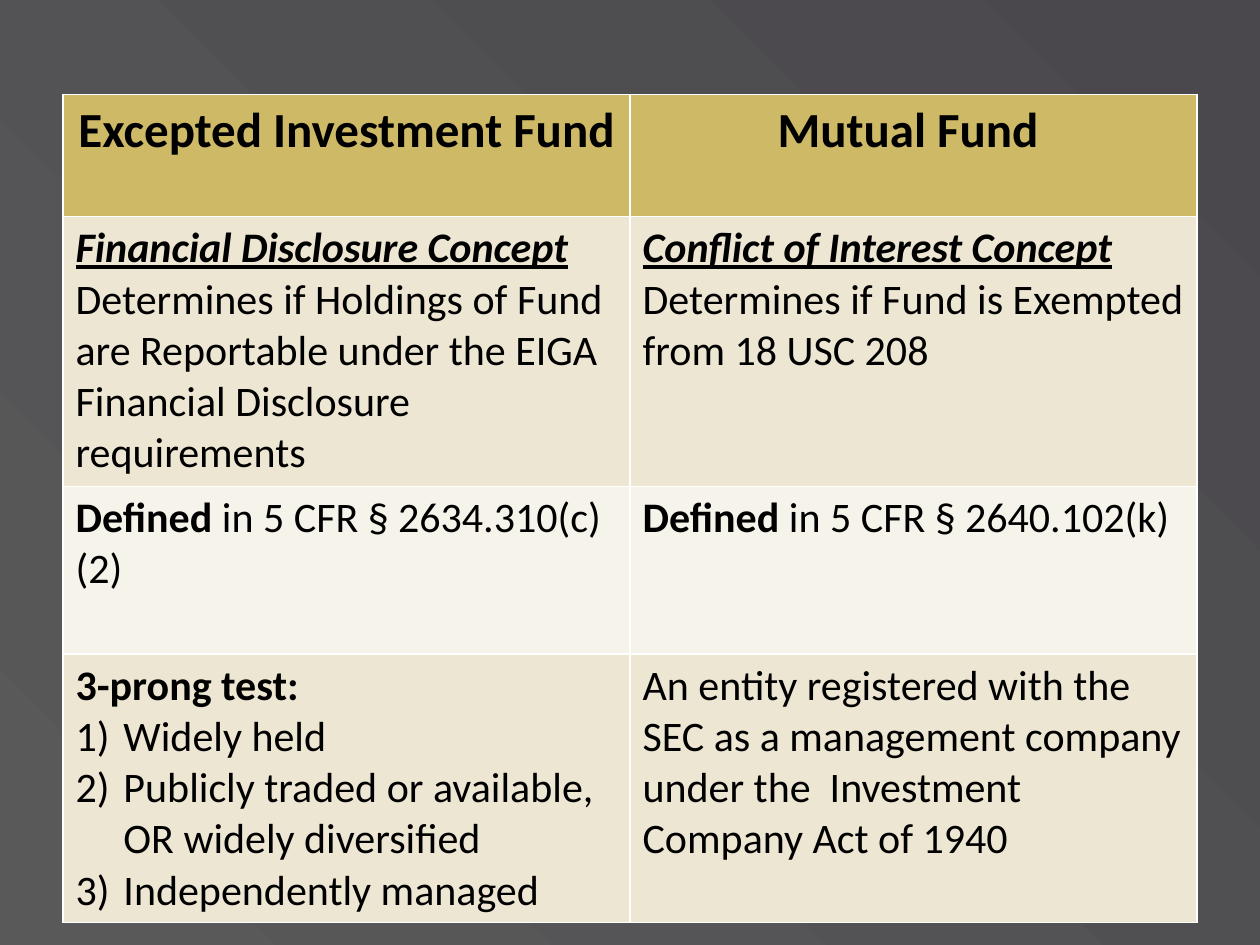
from lxml import etree
from pptx import Presentation
from pptx.dml.color import RGBColor
from pptx.enum.text import PP_ALIGN
from pptx.oxml import parse_xml
from pptx.oxml.ns import nsdecls, qn
from pptx.util import Inches, Pt

GOLD = RGBColor(0xCE, 0xB9, 0x66)
SAND = RGBColor(0xED, 0xE6, 0xD3)
CREAM = RGBColor(0xF6, 0xF3, 0xEA)
BLACK = RGBColor(0, 0, 0)
GREY = RGBColor(0x59, 0x59, 0x59)
SLATE = RGBColor(0x4A, 0x48, 0x4D)

PLAIN, BOLD, CONCEPT, NUMBERED = "plain", "bold", "concept", "numbered"

fund_rows = [
    (0.97, GOLD, 28, [
        [[("Excepted Investment Fund", BOLD)]],
        [[("Mutual Fund ", BOLD)]],
    ]),
    (2.14, SAND, 24, [
        [[("Financial Disclosure Concept", CONCEPT)],
         [("Determines if Holdings of Fund are Reportable under the EIGA "
           "Financial Disclosure requirements", PLAIN)]],
        [[("Conflict of Interest Concept", CONCEPT)],
         [("Determines if Fund is Exempted from 18 USC 208", PLAIN)]],
    ]),
    (1.33, CREAM, 24, [
        [[("Defined", BOLD), (" in 5 CFR § 2634.310(c)(2)", PLAIN)]],
        [[("Defined", BOLD), (" in 5 CFR § 2640.102(k)", PLAIN)]],
    ]),
    (2.13, SAND, 24, [
        [[("3-prong test:", BOLD)],
         [("Widely held", NUMBERED)],
         [("Publicly traded or available, OR widely diversified", NUMBERED)],
         [("Independently managed", NUMBERED)]],
        [[("An entity registered with the SEC as a management company under "
           "the  Investment Company Act of 1940", PLAIN)]],
    ]),
]

prs = Presentation()
prs.slide_width, prs.slide_height = Inches(10), Inches(7.5)
slide = prs.slides.add_slide(prs.slide_layouts[6])

backdrop = slide.background.fill
backdrop.gradient()
for stop, position, color in zip(backdrop.gradient_stops, (0, 1), (GREY, SLATE)):
    stop.position = position
    stop.color.rgb = color
direction = slide.background._cSld.find(".//" + qn("a:lin"))
direction.getparent().replace(direction, parse_xml(
    f'<a:path {nsdecls("a")} path="circle">'
    '<a:fillToRect t="100000" r="100000"/></a:path>'))

margin = prs.slide_width // 20
comparison = slide.shapes.add_table(
    len(fund_rows), 2, margin, prs.slide_height // 10,
    prs.slide_width - 2 * margin, Inches(sum(row[0] for row in fund_rows))).table

for row_index, (height, row_fill, size, fund_texts) in enumerate(fund_rows):
    comparison.rows[row_index].height = Inches(height)
    for column_index, lines in enumerate(fund_texts):
        cell = comparison.cell(row_index, column_index)
        cell.fill.solid()
        cell.fill.fore_color.rgb = row_fill
        frame = cell.text_frame
        for line_index, line in enumerate(lines):
            paragraph = frame.add_paragraph() if line_index else frame.paragraphs[0]
            paragraph.alignment = PP_ALIGN.LEFT if row_index else PP_ALIGN.CENTER
            for words, style in line:
                run = paragraph.add_run()
                run.text = words
                run.font.name = "Calibri"
                run.font.size = Pt(size)
                run.font.color.rgb = BLACK
                run.font.bold = style in (BOLD, CONCEPT)
                run.font.italic = style == CONCEPT
                run.font.underline = style == CONCEPT
                if style == NUMBERED:
                    indents = paragraph._p.get_or_add_pPr()
                    indents.set("marL", str(Inches(0.38)))
                    indents.set("indent", str(-Inches(0.38)))
                    etree.SubElement(indents, qn("a:buAutoNum"), type="arabicParenR")

prs.save("out.pptx")
